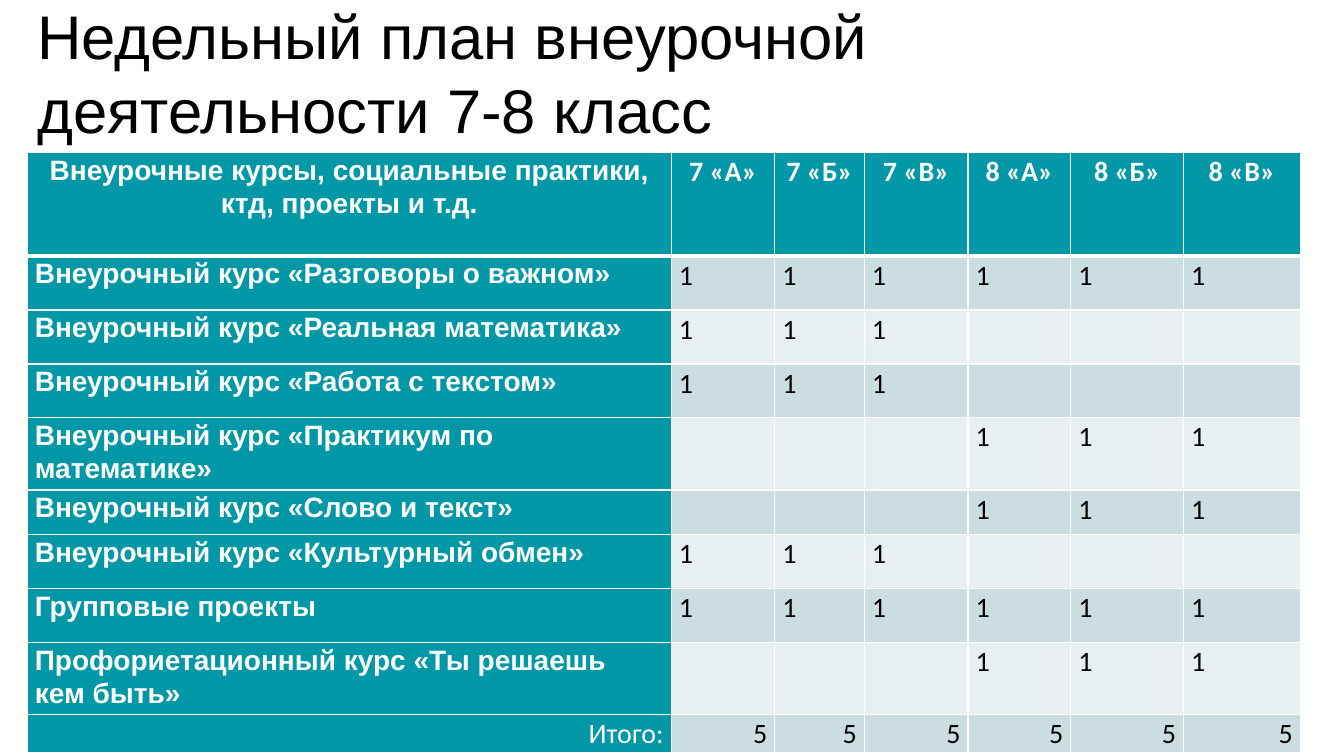
from lxml import etree
from pptx import Presentation
from pptx.dml.color import RGBColor
from pptx.enum import text
from pptx.oxml import ns
from pptx.util import Pt

COLORS = {
    "background": "FFFFFF",
    "title": "000000",
    "header": "0097A7",
    "header_text": "FFFFFF",
    "value_text": "000000",
    "odd_row": "CCDDE1",
    "even_row": "E7EFF1",
    "border": "FFFFFF",
}
TITLE = "Недельный план внеурочной деятельности 7-8 класс"
HEADER = ["Внеурочные курсы, социальные практики, ктд, проекты и т.д.",
          "7 «А»", "7 «Б»", "7 «В»", "8 «А»", "8 «Б»", "8 «В»"]
# Each course with its weekly hours in grades 7 and 8
COURSES = [
    ("Внеурочный курс «Разговоры о важном»", "1", "1"),
    ("Внеурочный курс «Реальная математика»", "1", ""),
    ("Внеурочный курс «Работа с текстом»", "1", ""),
    ("Внеурочный курс «Практикум по математике»", "", "1"),
    ("Внеурочный курс «Слово и текст»", "", "1"),
    ("Внеурочный курс «Культурный обмен»", "1", ""),
    ("Групповые проекты", "1", "1"),
    ("Профориетационный курс «Ты решаешь кем быть»", "", "1"),
]
TOTAL = ["Итого:"] + ["5"] * 6
COLUMN_WIDTHS = [460, 74, 64, 74, 73.5, 80.5, 83.5]
# Heights hold the wrapped labels and keep the totals row on the slide
ROW_HEIGHTS = [74, 38.5, 38.5, 38.5, 51.5, 32, 38.5, 38.5, 51.5, 27]


def color(name):
    return RGBColor.from_string(COLORS[name])


def add_title(slide, left, top, width, height):
    shape = slide.shapes.add_textbox(Pt(left), Pt(top), Pt(width), Pt(height))
    frame = shape.text_frame
    frame.word_wrap = True
    frame.vertical_anchor = text.MSO_ANCHOR.TOP
    paragraph = frame.paragraphs[0]
    paragraph.text = TITLE
    paragraph.font.name = "Arial"
    paragraph.font.size = Pt(44)
    paragraph.font.color.rgb = color("title")


def set_borders(cell, bottom_width, top_width):
    properties = cell._tc.get_or_add_tcPr()
    for side, width in (("L", 1), ("R", 1), ("T", top_width), ("B", bottom_width)):
        line = etree.SubElement(properties, ns.qn(f"a:ln{side}"), w=str(Pt(width)))
        fill = etree.SubElement(line, ns.qn("a:solidFill"))
        etree.SubElement(fill, ns.qn("a:srgbClr"), val=COLORS["border"])


def format_cell(cell, content, row, column, last_row):
    is_header, is_total, is_label = row == 0, row == last_row, column == 0
    set_borders(cell, 3 if is_header else 1, 3 if row == 1 else 1)
    cell.fill.solid()
    band = "odd_row" if row % 2 else "even_row"
    cell.fill.fore_color.rgb = color("header" if is_header or is_label else band)
    cell.margin_left = cell.margin_right = Pt(5.4)
    cell.margin_top = cell.margin_bottom = 0

    paragraph = cell.text_frame.paragraphs[0]
    paragraph.text = content
    paragraph.line_spacing = 1.07
    paragraph.space_after = Pt(8)
    if is_header:
        paragraph.alignment = text.PP_ALIGN.CENTER
    elif is_total:
        paragraph.alignment = text.PP_ALIGN.RIGHT
    font = paragraph.font
    font.size = Pt(20)
    font.name = "Arial" if is_label and not is_total else "Calibri"
    font.bold = is_header or (is_label and not is_total)
    font.color.rgb = color("header_text" if is_header or is_label else "value_text")


def add_plan_table(slide, left, top, width, height):
    rows = [HEADER]
    rows += [[name] + [grade_7] * 3 + [grade_8] * 3 for name, grade_7, grade_8 in COURSES]
    rows.append(TOTAL)
    table = slide.shapes.add_table(len(rows), len(HEADER), Pt(left), Pt(top),
                                   Pt(width), Pt(height)).table
    for column, column_width in zip(table.columns, COLUMN_WIDTHS):
        column.width = Pt(column_width)
    for row, row_height in zip(table.rows, ROW_HEIGHTS):
        row.height = Pt(row_height)
    for row, contents in enumerate(rows):
        for column, content in enumerate(contents):
            format_cell(table.cell(row, column), content, row, column, len(rows) - 1)


def main():
    presentation = Presentation()
    presentation.slide_width, presentation.slide_height = Pt(960), Pt(540)
    slide = presentation.slides.add_slide(presentation.slide_layouts[6])
    slide.background.fill.solid()
    slide.background.fill.fore_color.rgb = color("background")
    add_title(slide, 19.5, -5, 614, 114)
    add_plan_table(slide, 19.5, 109, sum(COLUMN_WIDTHS), sum(ROW_HEIGHTS))
    presentation.save("out.pptx")


if __name__ == "__main__":
    main()
